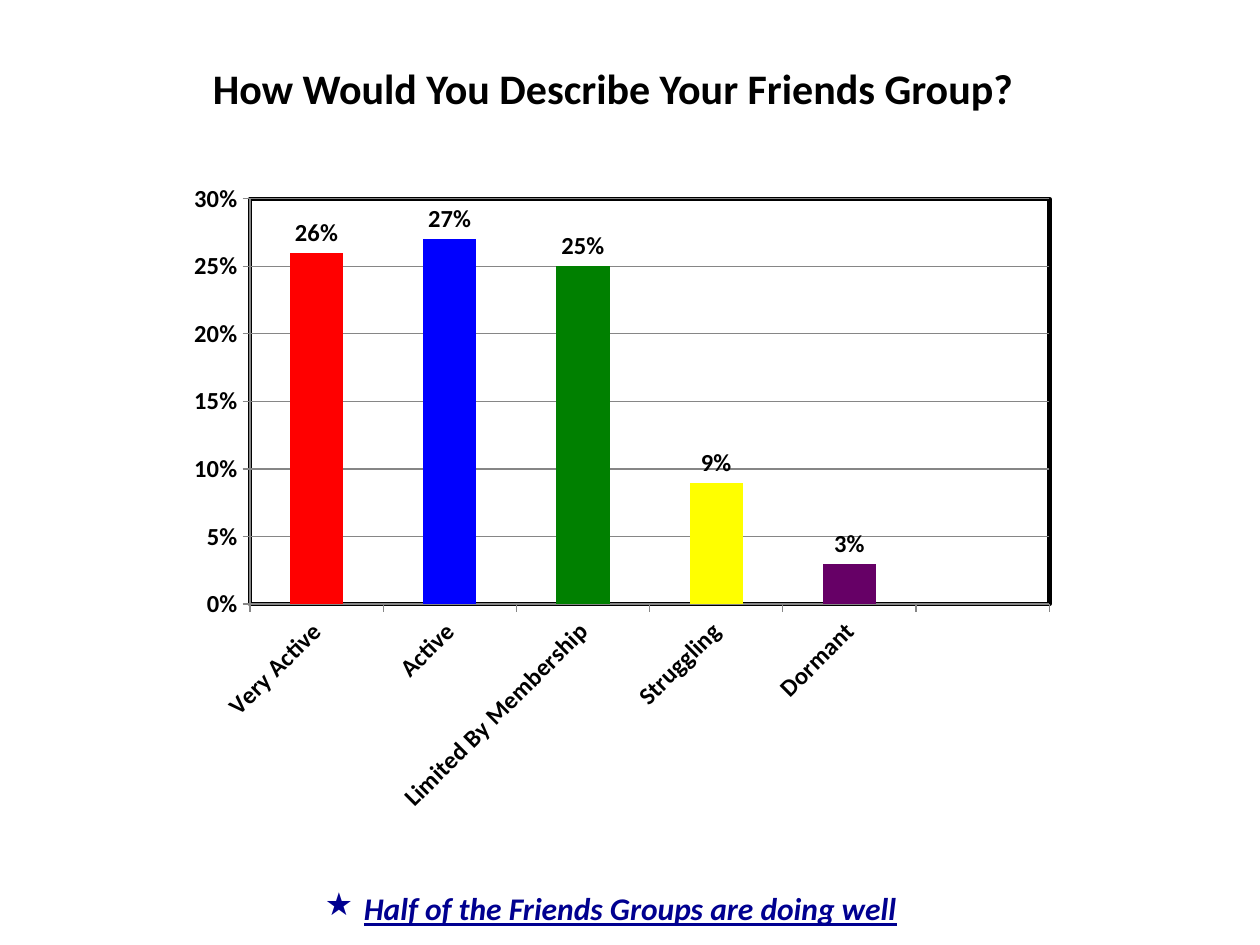
from pptx import Presentation
from pptx.chart.data import CategoryChartData
from pptx.dml.color import RGBColor
from pptx.enum.chart import XL_CHART_TYPE as ChartType, XL_LABEL_POSITION as LabelPosition
from pptx.enum.chart import XL_TICK_MARK as TickMark
from pptx.enum.text import PP_ALIGN as Align
from pptx.oxml import parse_xml
from pptx.oxml.ns import nsdecls
from pptx.util import Inches, Pt

BLACK = RGBColor(0x00, 0x00, 0x00)
GREY = RGBColor(0x86, 0x86, 0x86)
NAVY = RGBColor(0x00, 0x00, 0x90)
RED = RGBColor(0xFF, 0x00, 0x00)
BLUE = RGBColor(0x00, 0x00, 0xFF)
GREEN = RGBColor(0x00, 0x80, 0x00)
YELLOW = RGBColor(0xFF, 0xFF, 0x00)
PURPLE = RGBColor(0x66, 0x00, 0x66)
DARK_RED = RGBColor(0xC0, 0x00, 0x00)
FONT = "Calibri"

ACTIVITY = [
    ("Very Active", 0.26, RED),
    ("Active", 0.27, BLUE),
    ("Limited By Membership", 0.25, GREEN),
    ("Struggling", 0.09, YELLOW),
    ("Dormant", 0.03, PURPLE),
    ("", None, DARK_RED),
]


def style_font(font, size, color=BLACK):
    font.name = FONT
    font.size = Pt(size)
    font.bold = True
    font.color.rgb = color


def add_line(slide, box, text, size, color):
    frame = slide.shapes.add_textbox(*box).text_frame
    frame.word_wrap = True
    paragraph = frame.paragraphs[0]
    run = paragraph.add_run()
    run.text = text
    style_font(run.font, size, color)
    return paragraph, run


def add_title(slide, box):
    paragraph, _ = add_line(slide, box, "How Would You Describe Your Friends Group?", 24, BLACK)
    paragraph.alignment = Align.CENTER


def add_conclusion(slide, box):
    paragraph, run = add_line(slide, box, "Half of the Friends Groups are doing well", 18, NAVY)
    run.font.italic = True
    run.font.underline = True
    properties = paragraph._p.get_or_add_pPr()
    indent = Inches(0.31)
    properties.set("marL", str(indent))
    properties.set("indent", str(-indent))
    properties.append(parse_xml(f'<a:buClr {nsdecls("a")}><a:srgbClr val="{NAVY}"/></a:buClr>'))
    properties.append(parse_xml(f'<a:buChar {nsdecls("a")} char="★"/>'))


def style_axis(axis):
    axis.major_tick_mark = TickMark.OUTSIDE
    axis.format.line.color.rgb = GREY
    axis.format.line.width = Pt(0.75)
    style_font(axis.tick_labels.font, 14)


def frame_plot(chart, x, y, width, height):
    plot_area = chart.element.xpath("c:chart/c:plotArea")[0]
    for layout in plot_area.xpath("c:layout"):
        plot_area.remove(layout)
    shares = "".join(
        f'<c:{name} val="{share}"/>'
        for name, share in (("x", x), ("y", y), ("w", width), ("h", height))
    )
    plot_area.insert(0, parse_xml(
        f'<c:layout {nsdecls("c")}><c:manualLayout><c:layoutTarget val="inner"/>'
        f'<c:xMode val="edge"/><c:yMode val="edge"/>{shares}</c:manualLayout></c:layout>'
    ))
    plot_area.append(parse_xml(
        f'<c:spPr {nsdecls("c", "a")}><a:solidFill><a:srgbClr val="FFFFFF"/></a:solidFill>'
        f'<a:ln w="{Pt(2.5)}"><a:solidFill><a:srgbClr val="{BLACK}"/></a:solidFill></a:ln></c:spPr>'
    ))


def add_activity_chart(slide, box):
    data = CategoryChartData(number_format="0%")
    data.categories = [name for name, _, _ in ACTIVITY]
    data.add_series("Series 1", [share for _, share, _ in ACTIVITY])
    chart = slide.shapes.add_chart(ChartType.COLUMN_CLUSTERED, *box, data).chart
    chart.has_legend = False
    chart.has_title = False
    chart.font.name = FONT
    chart.font.size = Pt(10)
    chart.font.color.rgb = BLACK

    value_axis = chart.value_axis
    for axis in (chart.category_axis, value_axis):
        style_axis(axis)
    label_body = chart.element.xpath("c:chart/c:plotArea/c:catAx/c:txPr/a:bodyPr")[0]
    label_body.set("rot", str(-45 * 60000))
    value_axis.minimum_scale, value_axis.maximum_scale, value_axis.major_unit = 0, 0.3, 0.05
    value_axis.tick_labels.number_format = "0%"
    value_axis.tick_labels.number_format_is_linked = False
    value_axis.has_major_gridlines = True
    value_axis.major_gridlines.format.line.color.rgb = GREY
    value_axis.major_gridlines.format.line.width = Pt(0.75)

    plot = chart.plots[0]
    plot.gap_width = 150
    plot.vary_by_categories = False
    series = plot.series[0]
    for index, (_, _, color) in enumerate(ACTIVITY):
        fill = series.points[index].format.fill
        fill.solid()
        fill.fore_color.rgb = color
    labels = series.data_labels
    labels.show_value = True
    labels.position = LabelPosition.OUTSIDE_END
    labels.number_format = "0%"
    labels.number_format_is_linked = False
    style_font(labels.font, 14)
    frame_plot(chart, 0.08, 0.04, 0.9, 0.62)


def main():
    presentation = Presentation()
    presentation.slide_width, presentation.slide_height = Inches(10), Inches(7.5)
    slide = presentation.slides.add_slide(presentation.slide_layouts[6])
    add_title(slide, [Inches(n) for n in (1.27, 0.45, 7.19, 0.5)])
    add_activity_chart(slide, [Inches(n) for n in (1.42, 1.37, 7.05, 5.19)])
    add_conclusion(slide, [Inches(n) for n in (2.48, 7.01, 6.93, 0.4)])
    presentation.save("out.pptx")


if __name__ == "__main__":
    main()
